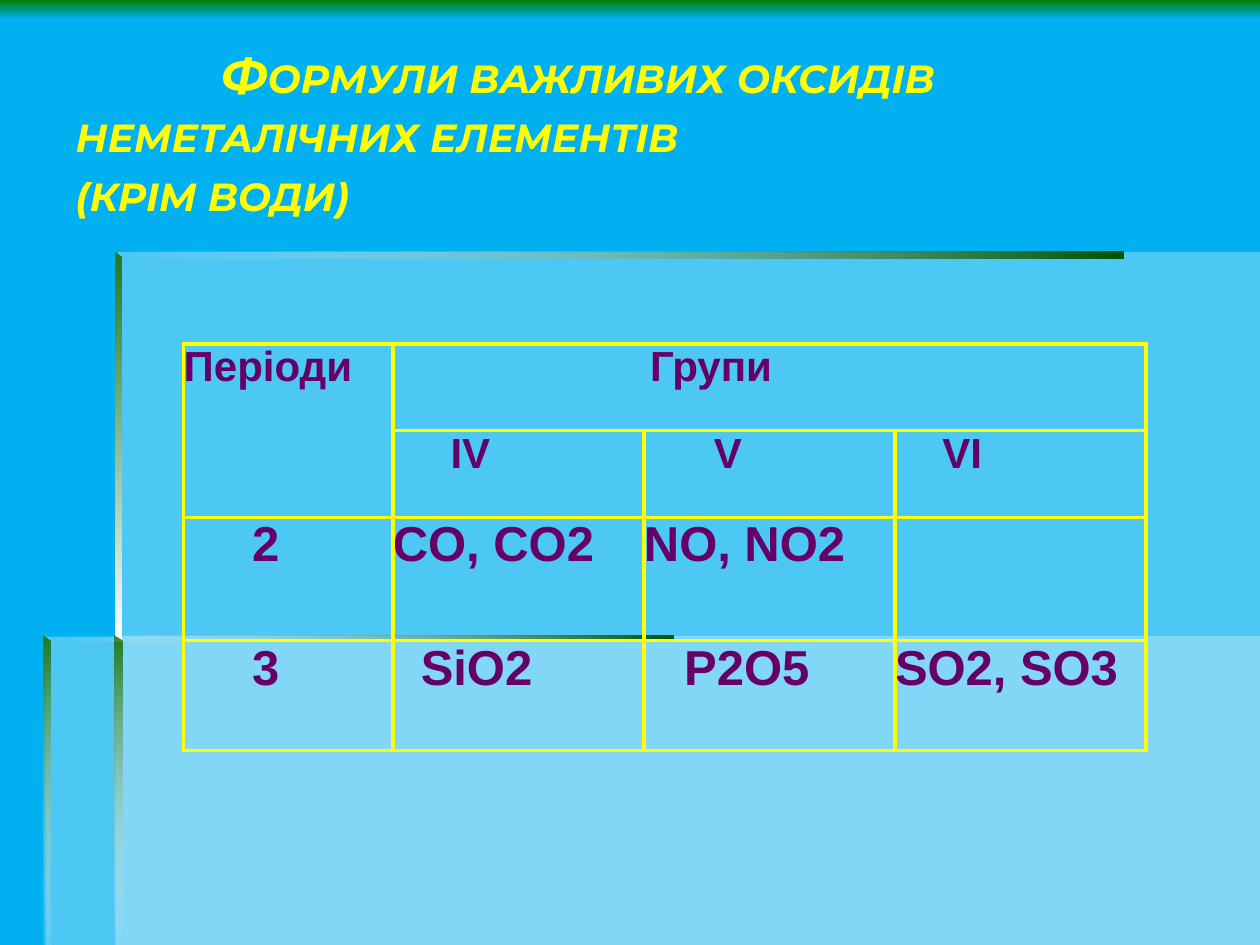
from lxml import etree
from pptx import Presentation
from pptx import util as u
from pptx.dml.color import RGBColor
from pptx.enum import text as t
from pptx.oxml import ns

THEME = {
    "sky": "00B0F0", "green": "008000", "deep": "005400", "edge": "1F791F",
    "white": "FFFFFF", "title": "FFFF00", "cell": "660066", "rule": "FFFF00",
    "head": "Montserrat", "body": "Arial", "small": 24, "big": 28, "line": 2.25,
}
WIDE, HIGH = 720, 540

TITLE = "Формули важливих оксидів\vнеметалічних елементів\v(крім води)"
TABLE = [
    [("Періоди", 0), ("Групи", 147), None, None],
    [None, ("IV", 33), ("V", 40), ("VI", 27)],
    [("2", 39), ("CO, CO2", 0), ("NO, NO2", 0), None],
    [("3", 39), ("SiO2", 16), ("P2O5", 23), ("SO2, SO3", 0)],
]
COLS = [119.5] + [143.5] * 3
ROWS = [49.6, 49.6, 70.5, 62.8]
SIZES = [THEME["small"]] * 2 + [THEME["big"]] * 2

CLEAR = [(0, THEME["white"], 0), (100, THEME["deep"], 100)]
FADE = [(0, THEME["edge"], 100), (100, THEME["white"], 100)]
GHOST = [(0, THEME["edge"], 100), (100, THEME["white"], 0)]
MIST = [(0, THEME["edge"], 100), (100, THEME["white"], 10)]
VEIL = [(0, THEME["white"], 30), (100, THEME["white"], 30)]


def panel(x, y):
    return [(x, y), (x, HIGH), (WIDE, HIGH), (WIDE, y)]


def beam(x, y, width):
    return [(x, y), (x, y + 3.8), (x + width, y + 3.8), (x + width, y)]


def post(x, y, end):
    return [(x, y), (x, end), (x + 4, end), (x + 4, y + 3.2)]


DECOR = [
    (panel(66, 363.5), VEIL, 0),
    ([(67.5, 364), (26, 364), (26, HIGH), (WIDE, HIGH), (WIDE, 144), (67.5, 144)], VEIL, 0),
    (beam(66, 144, 576), CLEAR, 0),
    (post(66, 144, 367), FADE, 90),
    (post(65.7, 363, HIGH), GHOST, 90),
    (beam(25, 363, 360), CLEAR, 0),
    (post(25, 363, HIGH), MIST, 90),
]


def blend(fill, props, stops, angle):
    fill.solid()
    old = props.find(ns.qn("a:solidFill"))
    marks = "".join(
        f'<a:gs pos="{pos * 1000}"><a:srgbClr val="{color}">'
        f'<a:alpha val="{alpha * 1000}"/></a:srgbClr></a:gs>'
        for pos, color, alpha in stops)
    props.replace(old, etree.fromstring(
        f'<a:gradFill {ns.nsdecls("a")} rotWithShape="1"><a:gsLst>{marks}</a:gsLst>'
        f'<a:lin ang="{angle * 60000}" scaled="0"/></a:gradFill>'))


def draw(slide, points, stops, angle):
    spots = [(u.Pt(x), u.Pt(y)) for x, y in points]
    pen = slide.shapes.build_freeform(*spots[0], scale=1.0)
    pen.add_line_segments(spots[1:], close=True)
    shape = pen.convert_to_shape()
    shape.shadow.inherit = False
    shape.line.fill.background()
    blend(shape.fill, shape._element.spPr, stops, angle)


def put(frame, words, size, color, font, indent=0, italic=False, caps=False):
    para = frame.paragraphs[0]
    para.text = words
    para.alignment = t.PP_ALIGN.LEFT
    props = para._p.get_or_add_pPr()
    props.set("marL", "0")
    props.set("indent", str(u.Pt(indent)))
    for run in para.runs:
        face = run.font
        face.size, face.name = u.Pt(size), font
        face.bold, face.italic = True, italic
        face.color.rgb = RGBColor.from_string(color)
        if caps:
            run._r.get_or_add_rPr().set("cap", "small")


def border(cell):
    props = cell._tc.get_or_add_tcPr()
    for place, side in enumerate("LRTB"):
        props.insert(place, etree.fromstring(
            f'<a:ln{side} {ns.nsdecls("a")} w="{u.Pt(THEME["line"])}"><a:solidFill>'
            f'<a:srgbClr val="{THEME["rule"]}"/></a:solidFill></a:ln{side}>'))


def add_title(slide):
    title = slide.shapes.title
    title.left, title.top = u.Pt(36), u.Pt(19.5)
    title.width, title.height = u.Pt(660), u.Pt(113)
    frame = title.text_frame
    frame.word_wrap = True
    frame.auto_size = t.MSO_AUTO_SIZE.NONE
    frame.vertical_anchor = t.MSO_ANCHOR.MIDDLE
    put(frame, TITLE, THEME["big"], THEME["title"], THEME["head"],
        indent=83, italic=True, caps=True)
    slide.shapes._spTree.append(title._element)


def add_grid(slide):
    grid = slide.shapes.add_table(
        len(ROWS), len(COLS), u.Pt(105), u.Pt(196.5),
        u.Pt(sum(COLS)), u.Pt(sum(ROWS))).table
    grid.first_row = grid.horz_banding = False
    for col, width in zip(grid.columns, COLS):
        col.width = u.Pt(width)
    for row, height in zip(grid.rows, ROWS):
        row.height = u.Pt(height)
    grid.cell(0, 0).merge(grid.cell(1, 0))
    grid.cell(0, 1).merge(grid.cell(0, 3))
    for r, line in enumerate(TABLE):
        for c, item in enumerate(line):
            cell = grid.cell(r, c)
            cell.margin_left = cell.margin_right = 0
            cell.margin_top = cell.margin_bottom = 0
            cell.fill.background()
            border(cell)
            if item:
                put(cell.text_frame, item[0], SIZES[r], THEME["cell"],
                    THEME["body"], indent=item[1])


def main():
    deck = Presentation()
    deck.slide_width, deck.slide_height = u.Pt(WIDE), u.Pt(HIGH)
    slide = deck.slides.add_slide(deck.slide_layouts[5])
    fill = slide.background.fill
    fill.solid()
    blend(fill, slide._element.cSld.bg.bgPr,
          [(0, THEME["green"], 100), (2, THEME["sky"], 100), (100, THEME["sky"], 100)], 90)
    for points, stops, angle in DECOR:
        draw(slide, points, stops, angle)
    add_title(slide)
    add_grid(slide)
    deck.save("out.pptx")


if __name__ == "__main__":
    main()
